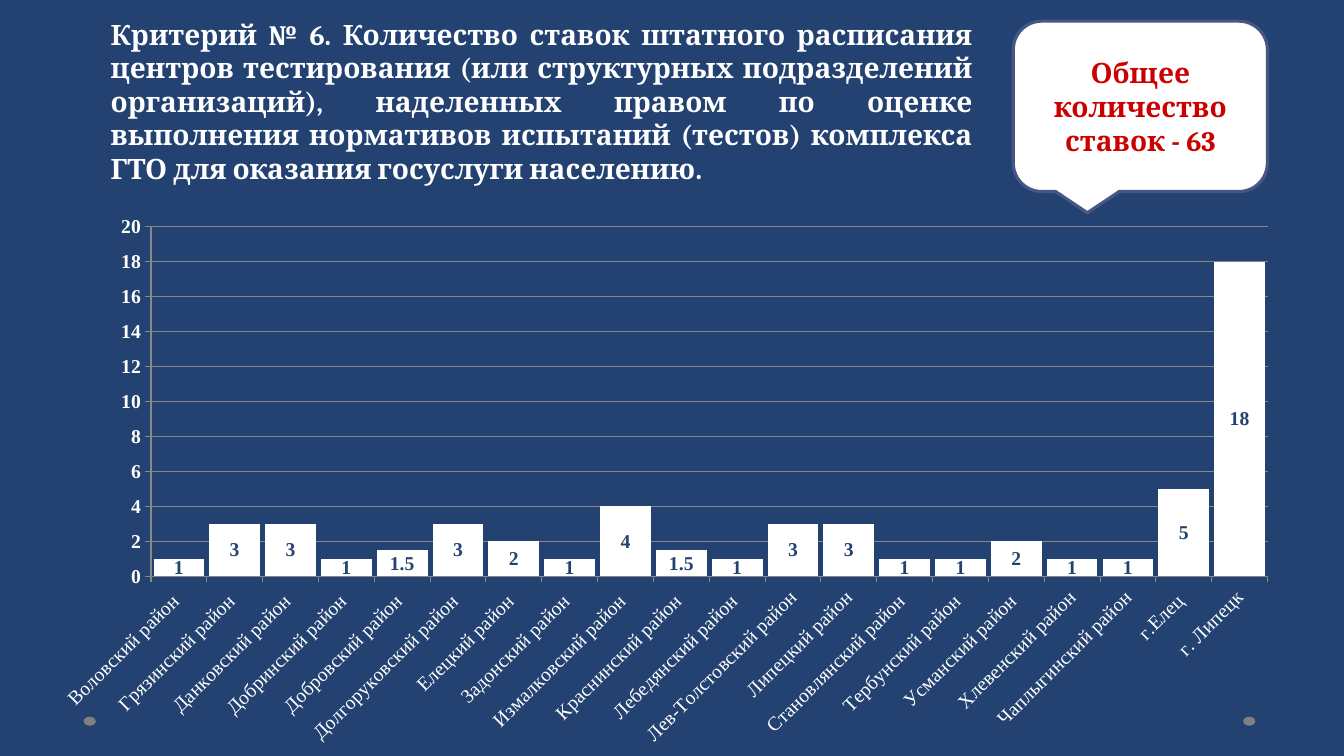
from dataclasses import dataclass

from pptx import Presentation
from pptx.chart.data import CategoryChartData
from pptx.dml.color import RGBColor
from pptx.enum.chart import XL_CHART_TYPE as ChartType, XL_LABEL_POSITION as LabelPosition
from pptx.enum.chart import XL_TICK_MARK as TickMark
from pptx.enum.shapes import MSO_SHAPE as ShapeKind
from pptx.enum.text import MSO_ANCHOR as Anchor, PP_ALIGN as Align
from pptx.oxml import parse_xml
from pptx.oxml.ns import nsdecls, qn
from pptx.util import Inches, Pt

CELL = Inches(0.1)  # the slide is a grid of 133.3 columns and 75 rows
NAVY, WHITE, RED, GREY, EDGE = "234271", "FFFFFF", "CC0000", "808080", "475785"
GRID_LINE = "878787"
TITLE = (
    "Критерий № 6. Количество ставок штатного расписания центров тестирования "
    "(или структурных подразделений организаций), наделенных правом по оценке "
    "выполнения нормативов испытаний (тестов) комплекса ГТО для оказания "
    "госуслуги населению."
)
STAFF_BY_DISTRICT = {
    "Воловский район ": 1, "Грязинский район ": 3, "Данковский район ": 3,
    "Добринский район ": 1, "Добровский район ": 1.5, "Долгоруковский район ": 3,
    "Елецкий район ": 2, "Задонский район ": 1, "Измалковский район ": 4,
    "Краснинский район ": 1.5, "Лебедянский район ": 1, "Лев-Толстовский район": 3,
    "Липецкий район": 3, "Становлянский район ": 1, "Тербунский район ": 1,
    "Усманский район ": 2, "Хлевенский район": 1, "Чаплыгинский район": 1,
    "г.Елец ": 5, "г. Липецк": 18,
}
PLOT_LAYOUT = {"x": 0.074, "y": 0.033, "w": 0.913, "h": 0.644}


@dataclass(frozen=True)
class Area:
    column: float
    row: float
    columns: float
    rows: float

    def lengths(self) -> list[int]:
        return [int(n * CELL) for n in (self.column, self.row, self.columns, self.rows)]


@dataclass(frozen=True)
class Figure:
    kind: ShapeKind
    area: Area
    fill: str
    line: str | None = None


DOTS = [Figure(ShapeKind.OVAL, Area(column, 71.1, 1.2, 0.9), GREY) for column in (8.3, 123.3)]
CALLOUT = Figure(ShapeKind.ROUNDED_RECTANGULAR_CALLOUT, Area(100.5, 2.1, 25.2, 16.9), WHITE, EDGE)
TITLE_AREA = Area(10, 1.2, 87.4, 17.8)
CHART_AREA = Area(6, 20.7, 121.3, 53.9)


def color(value: str) -> RGBColor:
    return RGBColor.from_string(value)


def set_all(target, values: dict) -> None:
    for name, value in values.items():
        setattr(target, name, value)


def style_font(font, size: float, value: str, bold: bool, name: str) -> None:
    set_all(font, {"size": Pt(size), "bold": bold, "name": name})
    font.color.rgb = color(value)


def add_figure(slide, figure: Figure):
    shape = slide.shapes.add_shape(figure.kind, *figure.area.lengths())
    shape.shadow.inherit = False
    shape.fill.solid()
    shape.fill.fore_color.rgb = color(figure.fill)
    if figure.line:
        shape.line.color.rgb = color(figure.line)
        shape.line.width = Pt(2.25)
    else:
        shape.line.fill.background()
    return shape


def write(shape, text: str, value: str, alignment: Align, anchor: Anchor) -> None:
    set_all(shape.text_frame, {"word_wrap": True, "vertical_anchor": anchor})
    paragraph = shape.text_frame.paragraphs[0]
    set_all(paragraph, {"text": text, "alignment": alignment})
    style_font(paragraph.runs[0].font, 20, value, True, "Cambria")


def place_plot(chart) -> None:
    """Fix the inner plot rectangle as shares of the chart."""
    plot_area = chart._chartSpace.chart.plotArea
    for layout in plot_area.findall(qn("c:layout")):
        plot_area.remove(layout)
    modes = "".join(f'<c:{side}Mode val="edge"/>' for side in "xy")
    shares = "".join(f'<c:{side} val="{share}"/>' for side, share in PLOT_LAYOUT.items())
    plot_area.insert(0, parse_xml(
        f'<c:layout {nsdecls("c")}><c:manualLayout><c:layoutTarget val="inner"/>'
        f"{modes}{shares}</c:manualLayout></c:layout>"
    ))


def style_axis(axis, bold: bool) -> None:
    set_all(axis, {"major_tick_mark": TickMark.OUTSIDE, "minor_tick_mark": TickMark.NONE})
    style_font(axis.tick_labels.font, 14, WHITE, bold, "Times New Roman")
    axis.format.line.color.rgb = color(GRID_LINE)


def add_staff_chart(slide) -> None:
    data = CategoryChartData()
    data.categories = STAFF_BY_DISTRICT.keys()
    data.add_series("Series 1", STAFF_BY_DISTRICT.values())
    chart = slide.shapes.add_chart(ChartType.COLUMN_STACKED, *CHART_AREA.lengths(), data).chart
    set_all(chart, {"has_legend": False, "has_title": False})
    style_font(chart.font, 14, "000000", False, "Times New Roman")
    place_plot(chart)

    style_axis(chart.category_axis, bold=False)
    text_body = chart.category_axis.tick_labels._element.find(qn("c:txPr"))
    text_body.find(qn("a:bodyPr")).set("rot", str(-45 * 60000))
    style_axis(chart.value_axis, bold=True)
    set_all(chart.value_axis, {
        "minimum_scale": 0, "maximum_scale": 20, "major_unit": 2, "has_major_gridlines": True,
    })
    chart.value_axis.major_gridlines.format.line.color.rgb = color(GRID_LINE)

    plot = chart.plots[0]
    set_all(plot, {
        "gap_width": 10, "overlap": 100, "vary_by_categories": False, "has_data_labels": True,
    })
    set_all(plot.data_labels, {"show_value": True, "position": LabelPosition.CENTER})
    style_font(plot.data_labels.font, 14, NAVY, True, "Times New Roman")
    bars = plot.series[0].format
    bars.fill.solid()
    bars.fill.fore_color.rgb = color(WHITE)


def main() -> None:
    presentation = Presentation()
    set_all(presentation, {"slide_width": Inches(13.33), "slide_height": Inches(7.5)})
    slide = presentation.slides.add_slide(presentation.slide_layouts[6])
    slide.background.fill.solid()
    slide.background.fill.fore_color.rgb = color(NAVY)

    for dot in DOTS:
        add_figure(slide, dot)
    add_staff_chart(slide)
    title = slide.shapes.add_textbox(*TITLE_AREA.lengths())
    write(title, TITLE, WHITE, Align.JUSTIFY, Anchor.TOP)
    callout = add_figure(slide, CALLOUT)
    write(callout, "Общее количество ставок - 63", RED, Align.CENTER, Anchor.MIDDLE)
    presentation.save("out.pptx")


if __name__ == "__main__":
    main()
